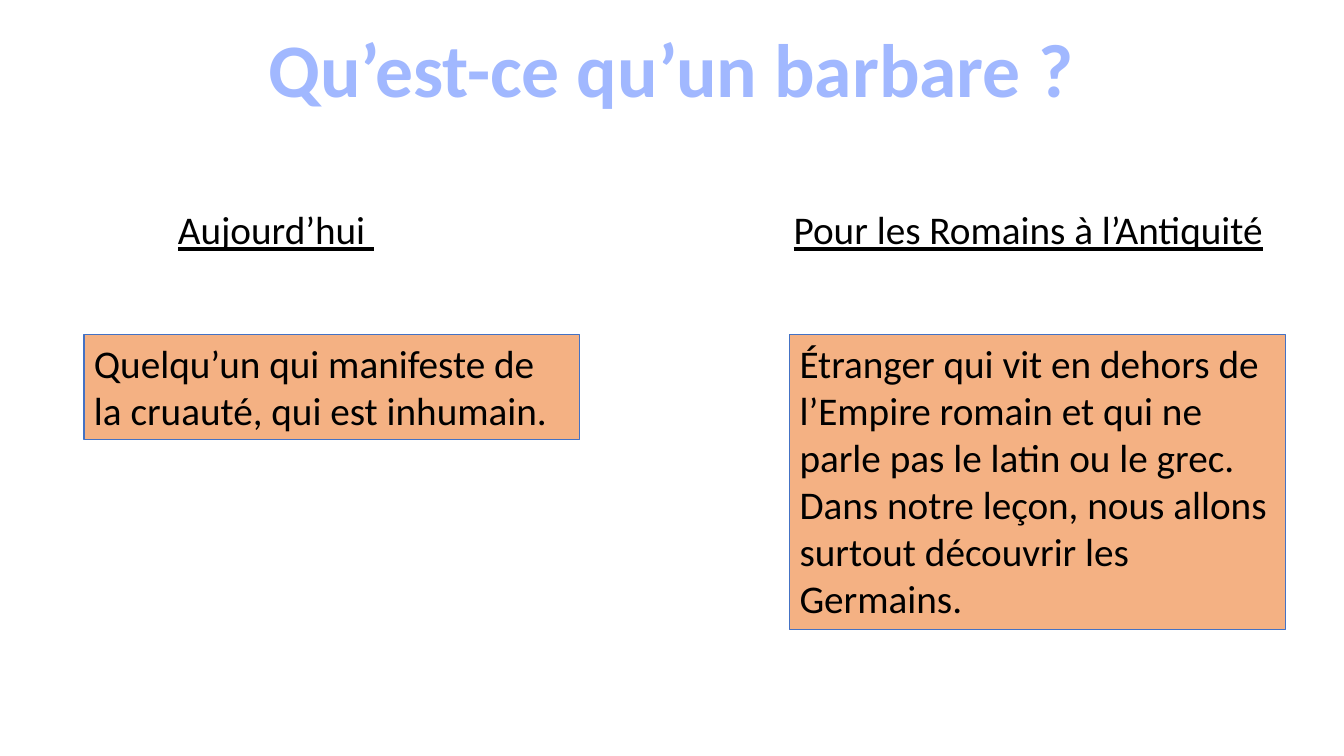
from pptx import Presentation
from pptx.dml.color import RGBColor
from pptx.enum.shapes import MSO_SHAPE
from pptx.enum.text import MSO_ANCHOR, MSO_AUTO_SIZE, PP_ALIGN
from pptx.util import Inches, Pt

COLORS = {"title": "A1B8FF", "text": "000000", "box": "F4B183", "edge": "4472C4"}
COLS, ROWS = 160, 90
TITLE = {"size": Pt(54), "bold": True}
HEADING = {"size": Pt(28), "underline": True}
BODY = {"size": Pt(28)}


class SlideBuilder:
    """Places elements on a grid of COLS columns by ROWS rows."""

    def __init__(self, prs):
        self.font = "Calibri"
        self.col = prs.slide_width / COLS
        self.row = prs.slide_height / ROWS
        self.s = prs.slides.add_slide(prs.slide_layouts[6])

    def place(self, x, y, w, h):
        return [int(v) for v in (x * self.col, y * self.row, w * self.col, h * self.row)]

    def fill_text(self, sp, text, style, color="text", align=PP_ALIGN.LEFT, wrap=True):
        tf = sp.text_frame
        frame = {"word_wrap": wrap, "auto_size": MSO_AUTO_SIZE.SHAPE_TO_FIT_TEXT,
                 "vertical_anchor": MSO_ANCHOR.TOP}
        for name, value in frame.items():
            setattr(tf, name, value)
        p = tf.paragraphs[0]
        p.alignment = align
        r = p.add_run()
        r.text = text
        for name, value in {"name": self.font, **style}.items():
            setattr(r.font, name, value)
        r.font.color.rgb = RGBColor.from_string(COLORS[color])

    def label(self, cell, text, style, **options):
        sp = self.s.shapes.add_textbox(*self.place(*cell))
        self.fill_text(sp, text, style, **options)

    def box(self, cell, text):
        sp = self.s.shapes.add_shape(MSO_SHAPE.RECTANGLE, *self.place(*cell))
        sp.shadow.inherit = False
        sp.fill.solid()
        sp.fill.fore_color.rgb = RGBColor.from_string(COLORS["box"])
        sp.line.color.rgb = RGBColor.from_string(COLORS["edge"])
        sp.line.width = Pt(0.75)
        self.fill_text(sp, text, BODY)


def main():
    prs = Presentation()
    prs.slide_width, prs.slide_height = Inches(13.33), Inches(7.5)
    slide = SlideBuilder(prs)

    # Title
    slide.label((30.2, 2, 99.4, 12.1), "Qu’est-ce qu’un barbare ?", TITLE,
                color="title", align=PP_ALIGN.CENTER, wrap=False)

    # Column headings
    slide.label((20, 23.9, 28, 6.9), "Aujourd’hui ", HEADING)
    slide.label((80, 23.9, 71.5, 6.9), "Pour les Romains à l’Antiquité", HEADING,
                align=PP_ALIGN.RIGHT)

    # Definitions
    slide.box((10, 39.8, 59, 12.5),
              "Quelqu’un qui manifeste de la cruauté, qui est inhumain.")
    slide.box((94, 39.8, 59, 35.2),
              "Étranger qui vit en dehors de l’Empire romain et qui ne parle pas "
              "le latin ou le grec. Dans notre leçon, nous allons surtout "
              "découvrir les Germains.")

    prs.save("out.pptx")


if __name__ == "__main__":
    main()
